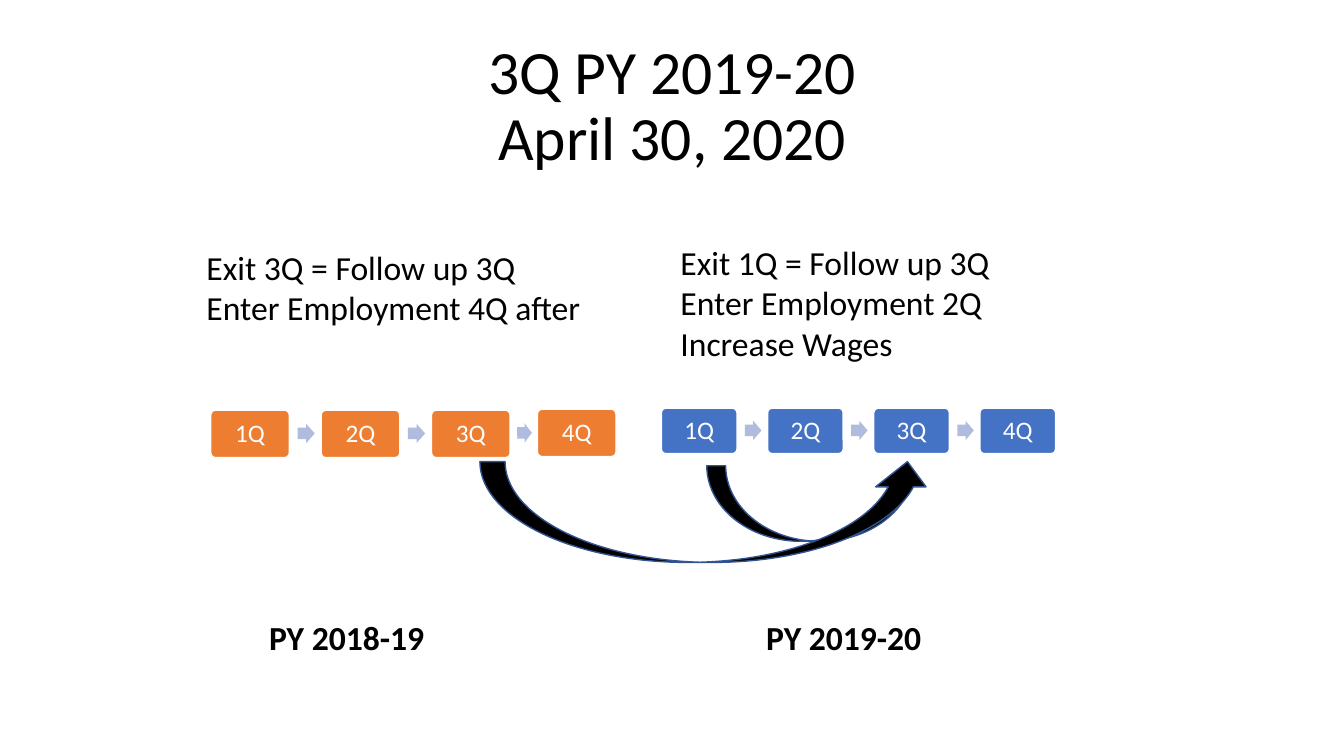
import math
import pptx
import pptx.util
import pptx.dml.color
import pptx.enum.shapes
import pptx.enum.text

Inches = pptx.util.Inches
Pt = pptx.util.Pt
RGBColor = pptx.dml.color.RGBColor
Shape = pptx.enum.shapes.MSO_SHAPE
Align = pptx.enum.text.PP_ALIGN
Anchor = pptx.enum.text.MSO_ANCHOR

BLACK = RGBColor(0x00, 0x00, 0x00)
WHITE = RGBColor(0xFF, 0xFF, 0xFF)
ORANGE = RGBColor(0xED, 0x7D, 0x31)
BLUE = RGBColor(0x44, 0x72, 0xC4)
PALE = RGBColor(0xB0, 0xBC, 0xDE)
NAVY = RGBColor(0x32, 0x54, 0x91)


def write(frame, lines, size, color=BLACK, bold=False, align=Align.LEFT, space=1.0):
    """Fill a text frame with one paragraph per line and format it."""
    frame.word_wrap = True
    for i, line in enumerate(lines):
        para = frame.paragraphs[0] if i == 0 else frame.add_paragraph()
        para.text = line
        para.alignment = align
        para.line_spacing = space
        for run in para.runs:
            run.font.name = "Calibri"
            run.font.size = Pt(size)
            run.font.bold = bold
            run.font.color.rgb = color


def add_text(slide, box, lines, size=24, **style):
    """Add a text box and return its frame."""
    frame = slide.shapes.add_textbox(*map(Inches, box)).text_frame
    write(frame, lines, size, **style)
    return frame


def add_form(shapes, kind, box, fill, line=None):
    """Add a filled preset shape, outlined if a line colour is given."""
    form = shapes.add_shape(kind, *map(Inches, box))
    form.shadow.inherit = False
    form.fill.solid()
    form.fill.fore_color.rgb = fill
    if line is None:
        form.line.fill.background()
    else:
        form.line.color.rgb = line
        form.line.width = Pt(1)
    return form


def add_box(shapes, box, label, fill):
    """Add a rounded quarter box with its label."""
    form = add_form(shapes, Shape.ROUNDED_RECTANGLE, box, fill, WHITE)
    form.adjustments[0] = 0.1
    frame = form.text_frame
    frame.vertical_anchor = Anchor.MIDDLE
    frame.margin_left = frame.margin_right = Inches(0.07)
    frame.margin_top = frame.margin_bottom = Inches(0.07)
    write(frame, [label], 18, color=WHITE, align=Align.CENTER, space=0.9)


def add_year(slide, spots, width, height, fill):
    """Add four quarter boxes at the given spots, joined by arrows."""
    shapes = slide.shapes.add_group_shape().shapes
    for i, (left, top) in enumerate(spots):
        add_box(shapes, (left, top, width, height), f"{i + 1}Q", fill)
    for (left, top), (after, level) in zip(spots, spots[1:]):
        gap = after - left - width
        mid = (top + level + height) / 2
        box = (left + width + 0.26 * gap, mid - 0.1, 0.54 * gap, 0.19)
        arrow = add_form(shapes, Shape.RIGHT_ARROW, box, PALE)
        arrow.adjustments[0] = 0.6
        arrow.rotation = math.degrees(math.atan2(level - top, after - left))


def add_curve(slide, box):
    """Add a black arrow curving up."""
    add_form(slide.shapes, Shape.CURVED_UP_ARROW, box, BLACK, NAVY)


def main():
    """Build the slide and save it."""
    deck = pptx.Presentation()
    deck.slide_width = Inches(13.33)
    deck.slide_height = Inches(7.5)
    slide = deck.slides.add_slide(deck.slide_layouts[6])

    title = add_text(slide, (2.17, 0.3, 9, 1.53), ["3Q PY 2019-20\nApril 30, 2020"],
                     size=44, align=Align.CENTER, space=0.9)
    title.vertical_anchor = Anchor.MIDDLE

    early = [(2.09 + 1.095 * i, 4.07) for i in range(3)] + [(5.33, 4.06)]
    late = [(6.56 + 1.053 * i, 4.05) for i in range(4)]
    add_year(slide, early, 0.78, 0.47, ORANGE)
    add_year(slide, late, 0.75, 0.45, BLUE)

    for left, year in ((2.57, "PY 2018-19"), (7.5, "PY 2019-20")):
        add_text(slide, (left, 6.07, 3.42, 0.5), [year], bold=True)

    add_curve(slide, (7.01, 4.62, 2.15, 0.75))
    add_text(slide, (6.65, 2.35, 3.75, 1.31),
             ["Exit 1Q = Follow up 3Q", "Enter Employment 2Q", "Increase Wages"])
    add_curve(slide, (4.76, 4.58, 4.49, 1))
    add_text(slide, (1.95, 2.4, 4, 0.91),
             ["Exit 3Q = Follow up 3Q", "Enter Employment 4Q after"])
    deck.save("out.pptx")


if __name__ == "__main__":
    main()
